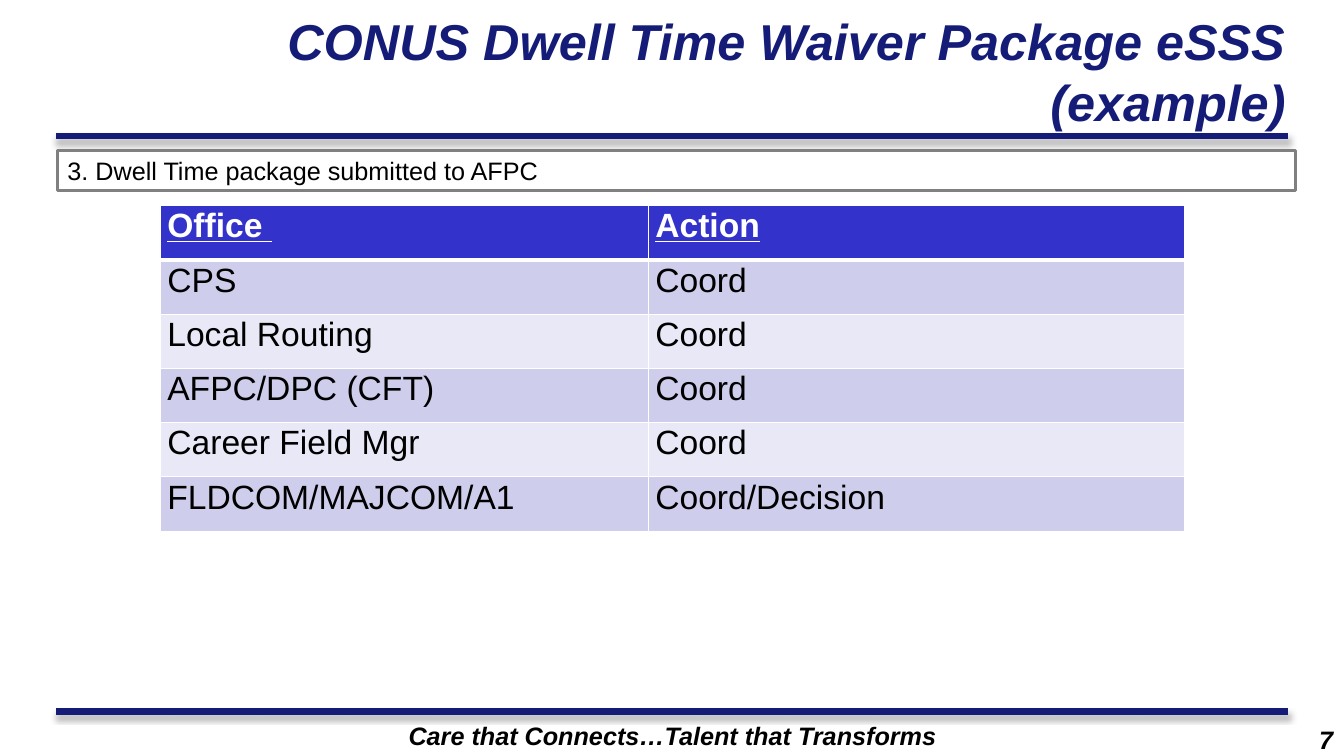
from lxml import etree
from pptx import Presentation, util as u
from pptx.dml.color import RGBColor
from pptx.enum import shapes, text
from pptx.oxml import parse_xml
from pptx.oxml.ns import nsdecls, qn

HUES = {"navy": "151C77", "head": "3333CC", "dark": "CECEEC", "pale": "E8E8F6",
        "white": "FFFFFF", "black": "000000", "gray": "808080"}
LEFT, RIGHT = text.PP_ALIGN.LEFT, text.PP_ALIGN.RIGHT
CENTER = text.PP_ALIGN.CENTER
TOP, MIDDLE = text.MSO_ANCHOR.TOP, text.MSO_ANCHOR.MIDDLE
BOLD = {"bold": True, "italic": True}


def hue(name):
    return RGBColor.from_string(HUES[name])


class Deck:
    """Style and current slide; lengths are percent of the slide's size."""

    def __init__(self, wide, high):
        self.prs = Presentation()
        self.prs.slide_width = self.wide = u.Inches(wide)
        self.prs.slide_height = self.high = u.Inches(high)
        self.slide = self.prs.slides.add_slide(self.prs.slide_layouts[6])
        self.form = {"name": "Arial", "size": u.Pt(18)}

    def x(self, part):
        return round(self.wide * part / 100)

    def y(self, part):
        return round(self.high * part / 100)

    def area(self, left, top, wide, high):
        return self.x(left), self.y(top), self.x(wide), self.y(high)

    def put(self, frame, words, color="black", align=LEFT, **form):
        par = frame.paragraphs[0]
        par.alignment = align
        run = par.add_run()
        run.text = words
        for key, val in {**self.form, **form}.items():
            setattr(run.font, key, val)
        run.font.color.rgb = hue(color)
        return par

    def label(self, area, words, anchor=TOP, **form):
        frame = self.slide.shapes.add_textbox(*self.area(*area)).text_frame
        frame.word_wrap = True
        frame.vertical_anchor = anchor
        self.put(frame, words, **form)

    def rule(self, left, right, top):
        line = self.slide.shapes.add_connector(
            shapes.MSO_CONNECTOR.STRAIGHT,
            self.x(left), self.y(top), self.x(right), self.y(top))
        line.line.color.rgb = hue("navy")
        line.line.width = u.Pt(4.5)
        line._element.spPr.append(parse_xml(
            f'<a:effectLst {nsdecls("a")}><a:outerShdw blurRad="{u.Pt(4)}" '
            f'dist="{u.Pt(3)}" dir="5400000" rotWithShape="0">'
            f'<a:srgbClr val="{HUES["black"]}"><a:alpha val="40000"/></a:srgbClr>'
            '</a:outerShdw></a:effectLst>'))

    def panel(self, area, words):
        box = self.slide.shapes.add_shape(
            shapes.MSO_SHAPE.RECTANGLE, *self.area(*area))
        box.shadow.inherit = False
        box.fill.background()
        box.line.color.rgb = hue("gray")
        box.line.width = u.Pt(2.25)
        box.text_frame.word_wrap = True
        box.text_frame.vertical_anchor = TOP
        self.put(box.text_frame, words)

    def edge(self, cell, **widths):
        props = cell._tc.get_or_add_tcPr()
        for side in "LRTB":
            line = etree.SubElement(props, qn(f"a:ln{side}"),
                                    w=str(u.Pt(widths.get(side, 1))))
            fill = etree.SubElement(line, qn("a:solidFill"))
            etree.SubElement(fill, qn("a:srgbClr"), val=HUES["white"])

    def table(self, left, top, cols, tall, rows):
        grid = self.slide.shapes.add_table(
            len(rows), len(cols),
            *self.area(left, top, sum(cols), tall * len(rows))).table
        for col, wide in zip(grid.columns, cols):
            col.width = self.x(wide)
        pad = u.Inches(0.07)
        inset = {"margin_left": pad, "margin_right": pad,
                 "margin_top": 0, "margin_bottom": 0}
        for r, row in enumerate(rows):
            grid.rows[r].height = self.y(tall)
            head = r == 0
            fill = "head" if head else ("pale", "dark")[r % 2]
            for c, words in enumerate(row):
                cell = grid.cell(r, c)
                for key, val in inset.items():
                    setattr(cell, key, val)
                self.edge(cell, B=3 if head else 1, T=3 if r == 1 else 1)
                cell.fill.solid()
                cell.fill.fore_color.rgb = hue(fill)
                par = self.put(cell.text_frame, words,
                               "white" if head else "black",
                               size=u.Pt(24), bold=head, underline=head)
                par.line_spacing = 1.05


def main():
    deck = Deck(13.33, 7.5)

    # Frame rules and footer
    for top in (18, 94.13):
        deck.rule(4.2, 95.87, top)
    deck.label((14.18, 94.67, 71.72, 5.33),
               "Care that Connects…Talent that Transforms", align=CENTER, **BOLD)

    # Title
    deck.label((18.23, 1.07, 78.17, 16.67),
               "CONUS Dwell Time Waiver Package eSSS (example)", MIDDLE,
               color="navy", align=RIGHT, size=u.Pt(36), **BOLD)

    # Routing table
    deck.table(11.93, 27.2, (36.31, 39.91), 7.18, [
        ("Office ", "Action"),
        ("CPS", "Coord"),
        ("Local Routing", "Coord"),
        ("AFPC/DPC (CFT)", "Coord"),
        ("Career Field Mgr", "Coord"),
        ("FLDCOM/MAJCOM/A1", "Coord/Decision"),
    ])

    # Page number and step
    deck.label((87.4, 95.2, 12.53, 4.4), "7", align=RIGHT, **BOLD)
    deck.panel((4.28, 19.87, 92.12, 5.33),
               "3. Dwell Time package submitted to AFPC")

    deck.prs.save("out.pptx")


if __name__ == "__main__":
    main()
